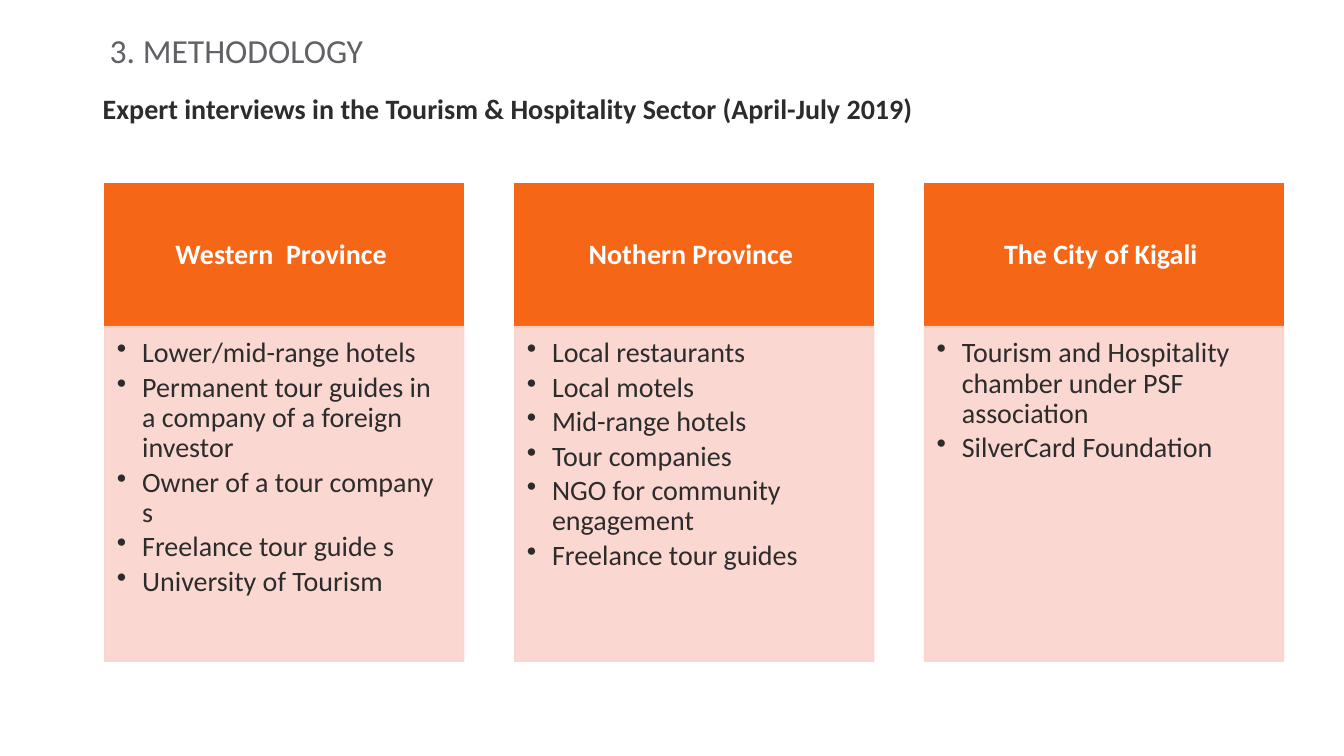
import pptx
import pptx.dml.color
import pptx.enum.shapes
import pptx.enum.text
import pptx.oxml
import pptx.oxml.ns
import pptx.util
from pptx.util import Inches

RGBColor = pptx.dml.color.RGBColor
ORANGE = RGBColor(0xF5, 0x66, 0x17)
PINK = RGBColor(0xFB, 0xD3, 0xCC)
DARK = RGBColor(0x2C, 0x2C, 0x2C)
GREY = RGBColor(0x61, 0x61, 0x66)
WHITE = RGBColor(0xFF, 0xFF, 0xFF)

LEFT, PITCH, WIDTH = 1.04, 4.065, 3.56
HEAD_TOP, HEAD_HEIGHT = 1.82, 1.43
BODY_TOP, BODY_HEIGHT = 3.24, 3.32

INTERVIEWS = [
    ("Western  Province ", [
        "Lower/mid-range hotels",
        "Permanent tour guides in a company of a foreign investor",
        "Owner of a tour company s",
        "Freelance tour guide s",
        "University of Tourism",
    ]),
    ("Nothern Province ", [
        "Local restaurants",
        "Local motels",
        "Mid-range hotels",
        "Tour companies",
        "NGO for community engagement",
        "Freelance tour guides",
    ]),
    ("The City of Kigali ", [
        "Tourism and Hospitality chamber under PSF association",
        "SilverCard Foundation",
    ]),
]


class SlideBuilder:
    font = "Calibri"

    def __init__(self, slide):
        self.slide = slide

    def style(self, p, size, color, bold=False):
        for r in p.runs:
            r.font.name = self.font
            r.font.size = pptx.util.Pt(size)
            r.font.color.rgb = color
            r.font.bold = bold

    def text(self, left, top, width, height, text, size, color, bold=False):
        box = self.slide.shapes.add_textbox(
            Inches(left), Inches(top), Inches(width), Inches(height))
        tf = box.text_frame
        tf.word_wrap = True
        tf.text = text
        self.style(tf.paragraphs[0], size, color, bold)

    def panel(self, left, top, height, color, insets, anchor, opacity=100):
        """Add a filled rectangle and return its text frame."""
        sp = self.slide.shapes.add_shape(
            pptx.enum.shapes.MSO_SHAPE.RECTANGLE,
            Inches(left), Inches(top), Inches(WIDTH), Inches(height))
        sp.shadow.inherit = False
        sp.fill.solid()
        sp.fill.fore_color.rgb = color
        sp.line.color.rgb = color
        sp.line.width = pptx.util.Pt(1)
        if opacity < 100:
            for clr in sp.element.spPr.iter(pptx.oxml.ns.qn("a:srgbClr")):
                alpha = pptx.oxml.parse_xml(
                    f'<a:alpha {pptx.oxml.ns.nsdecls("a")} val="{opacity * 1000}"/>')
                clr.append(alpha)
        tf = sp.text_frame
        tf.word_wrap = True
        tf.vertical_anchor = anchor
        (tf.margin_left, tf.margin_top,
         tf.margin_right, tf.margin_bottom) = map(Inches, insets)
        return tf

    def heading(self, left, text):
        tf = self.panel(left, HEAD_TOP, HEAD_HEIGHT, ORANGE,
                        (0.16, 0.09, 0.16, 0.09), pptx.enum.text.MSO_ANCHOR.MIDDLE)
        tf.text = text
        p = tf.paragraphs[0]
        p.alignment = pptx.enum.text.PP_ALIGN.CENTER
        p.line_spacing = 0.9
        self.style(p, 20, WHITE, bold=True)

    def bullets(self, left, items):
        tf = self.panel(left, BODY_TOP, BODY_HEIGHT, PINK,
                        (0.12, 0.12, 0.16, 0.17), pptx.enum.text.MSO_ANCHOR.TOP,
                        opacity=90)
        tf.text = "\n".join(items)
        for p in tf.paragraphs:
            p.alignment = pptx.enum.text.PP_ALIGN.LEFT
            p.line_spacing = 0.9
            p.space_after = pptx.util.Pt(3)
            pPr = p._p.get_or_add_pPr()
            pPr.set("marL", str(Inches(0.25)))
            pPr.set("indent", str(Inches(-0.25)))
            pPr.append(pptx.oxml.parse_xml(
                f'<a:buChar {pptx.oxml.ns.nsdecls("a")} char="•"/>'))
            self.style(p, 20, DARK)


def main():
    prs = pptx.Presentation()
    prs.slide_width, prs.slide_height = Inches(13.33), Inches(7.5)
    s = SlideBuilder(prs.slides.add_slide(prs.slide_layouts[6]))
    s.text(0.92, 0.86, 11.77, 0.44,
           "Expert interviews in the Tourism & Hospitality Sector (April-July 2019)",
           20, DARK, bold=True)
    s.text(0.99, 0.25, 10.27, 0.5, "3. METHODOLOGY", 24, GREY)
    for i, (place, experts) in enumerate(INTERVIEWS):
        left = LEFT + i * PITCH
        s.heading(left, place)
        s.bullets(left, experts)
    prs.save("out.pptx")


if __name__ == "__main__":
    main()
